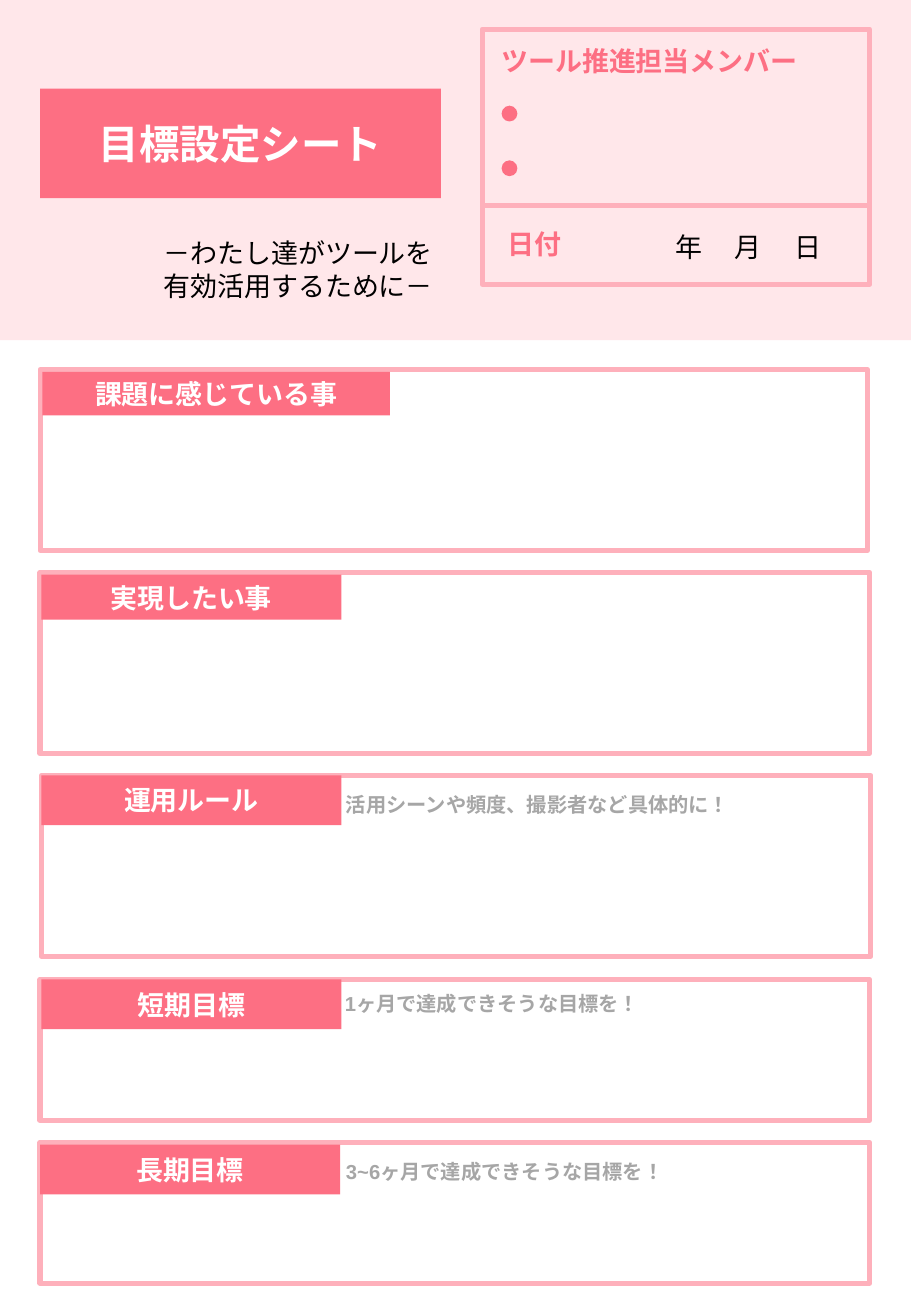
from dataclasses import dataclass

from lxml.etree import SubElement
from pptx import Presentation
from pptx.dml.color import RGBColor
from pptx.enum.lang import MSO_LANGUAGE_ID as Language
from pptx.enum.shapes import MSO_SHAPE as Preset
from pptx.enum.text import MSO_ANCHOR as Anchor, MSO_AUTO_SIZE as AutoSize, PP_ALIGN as Align
from pptx.oxml.ns import qn
from pptx.shapes.base import BaseShape
from pptx.slide import Slide
from pptx.util import Inches, Pt

BLUSH = RGBColor(0xFF, 0xE7, 0xEA)
CORAL = RGBColor(0xFD, 0x6F, 0x83)
PINK = RGBColor(0xFE, 0xB0, 0xBB)
WHITE = RGBColor(0xFF, 0xFF, 0xFF)
BLACK = RGBColor(0, 0, 0)
GREY = RGBColor(0xA6, 0xA6, 0xA6)


@dataclass(frozen=True)
class Area:
    left: float
    top: float
    width: float
    height: float

    def inches(self) -> tuple[Inches, ...]:
        return tuple(Inches(side) for side in (self.left, self.top, self.width, self.height))


@dataclass(frozen=True)
class Style:
    size: int
    color: RGBColor
    bold: bool = True
    font: str = "Arial"
    align: Align = Align.LEFT
    anchor: Anchor = Anchor.TOP
    tabs: tuple[float, ...] = ()


@dataclass(frozen=True)
class Section:
    heading: str
    frame: Area
    label: Area
    hint: str = ""
    hint_at: Area | None = None


TITLE = Style(24, WHITE, align=Align.CENTER, anchor=Anchor.MIDDLE)
HEADING = Style(16, WHITE, align=Align.CENTER, anchor=Anchor.MIDDLE)
FIELD = Style(16, CORAL)
SUBTITLE = Style(16, BLACK, bold=False)
DATE = Style(16, BLACK, bold=False, font="Roboto", tabs=(0.67, 1.16, 1.65))
HINT = Style(12, GREY)

SECTIONS = [
    Section("課題に感じている事", Area(0.33, 3.04, 6.81, 1.49), Area(0.35, 3.06, 2.86, 0.36)),
    Section("実現したい事", Area(0.33, 4.71, 6.83, 1.49), Area(0.34, 4.73, 2.47, 0.37)),
    Section("運用ルール", Area(0.34, 6.38, 6.83, 1.49), Area(0.34, 6.38, 2.47, 0.41),
            "活用シーンや頻度、撮影者など具体的に！", Area(2.75, 6.47, 4.09, 0.3)),
    Section("短期目標", Area(0.33, 8.06, 6.83, 1.16), Area(0.34, 8.06, 2.47, 0.41),
            "1ヶ月で達成できそうな目標を！", Area(2.74, 8.11, 4.09, 0.3)),
    Section("長期目標", Area(0.33, 9.4, 6.83, 1.16), Area(0.33, 9.42, 2.47, 0.41),
            "3~6ヶ月で達成できそうな目標を！", Area(2.75, 9.49, 4.09, 0.3)),
]


def write(box: BaseShape, lines: list[str], style: Style) -> None:
    frame = box.text_frame
    frame.word_wrap = True
    frame.auto_size = AutoSize.NONE
    frame.vertical_anchor = style.anchor
    for index, line in enumerate(lines):
        para = frame.add_paragraph() if index else frame.paragraphs[0]
        para.alignment = style.align
        if style.tabs:
            stops = SubElement(para._p.get_or_add_pPr(), qn("a:tabLst"))
            for stop in style.tabs:
                SubElement(stops, qn("a:tab"), pos=str(Inches(stop)), algn="l")
        span = para.add_run()
        span.text = line
        span.font.size = Pt(style.size)
        span.font.bold = style.bold
        span.font.color.rgb = style.color
        span.font.language_id = Language.JAPANESE
        span.font.name = style.font
        SubElement(span._r.get_or_add_rPr(), qn("a:ea"), typeface=style.font)


def add_block(page: Slide, area: Area, fill: RGBColor | None = None,
              line: RGBColor | None = None, preset: Preset = Preset.RECTANGLE) -> BaseShape:
    block = page.shapes.add_shape(preset, *area.inches())
    block.shadow.inherit = False
    if fill is None:
        block.fill.background()
    else:
        block.fill.solid()
        block.fill.fore_color.rgb = fill
    if line is None:
        block.line.fill.background()
    else:
        block.line.color.rgb = line
        block.line.width = Pt(3)
    return block


def add_title(page: Slide, text: str, area: Area) -> None:
    title = page.shapes.title
    title.left, title.top, title.width, title.height = area.inches()
    title.fill.solid()
    title.fill.fore_color.rgb = CORAL
    write(title, [text], TITLE)
    # Bring the title in front of the header band
    title.element.getparent().append(title.element)


def add_header(page: Slide) -> None:
    add_block(page, Area(0, 0, 7.5, 2.8), BLUSH)
    add_title(page, "目標設定シート", Area(0.33, 0.73, 3.3, 0.9))
    subtitle = add_block(page, Area(1.25, 1.9, 2.61, 0.64), BLUSH)
    write(subtitle, ["－わたし達がツールを", "有効活用するために－"], SUBTITLE)

    # Members panel
    add_block(page, Area(3.97, 0.24, 3.19, 1.49), BLUSH, PINK)
    members = add_block(page, Area(4.03, 0.32, 3.08, 0.37), BLUSH)
    write(members, ["ツール推進担当メンバー"], FIELD)
    for top in (0.87, 1.32):
        add_block(page, Area(4.13, top, 0.13, 0.13), CORAL, preset=Preset.OVAL)

    # Date panel
    add_block(page, Area(3.97, 1.69, 3.19, 0.65), BLUSH, PINK)
    write(add_block(page, Area(4.08, 1.82, 0.77, 0.37), BLUSH), ["日付"], FIELD)
    write(add_block(page, Area(4.79, 1.85, 2.2, 0.37), BLUSH), ["\t年\t月\t日"], DATE)


def add_section(page: Slide, section: Section) -> None:
    add_block(page, section.frame, line=PINK)
    write(add_block(page, section.label, CORAL), [section.heading], HEADING)
    if section.hint_at:
        hint = page.shapes.add_textbox(*section.hint_at.inches())
        write(hint, [section.hint], HINT)


def main() -> None:
    deck = Presentation()
    deck.slide_width, deck.slide_height = Inches(7.5), Inches(10.83)
    page = deck.slides.add_slide(deck.slide_layouts[5])
    add_header(page)
    for section in SECTIONS:
        add_section(page, section)
    deck.save("out.pptx")


if __name__ == "__main__":
    main()
